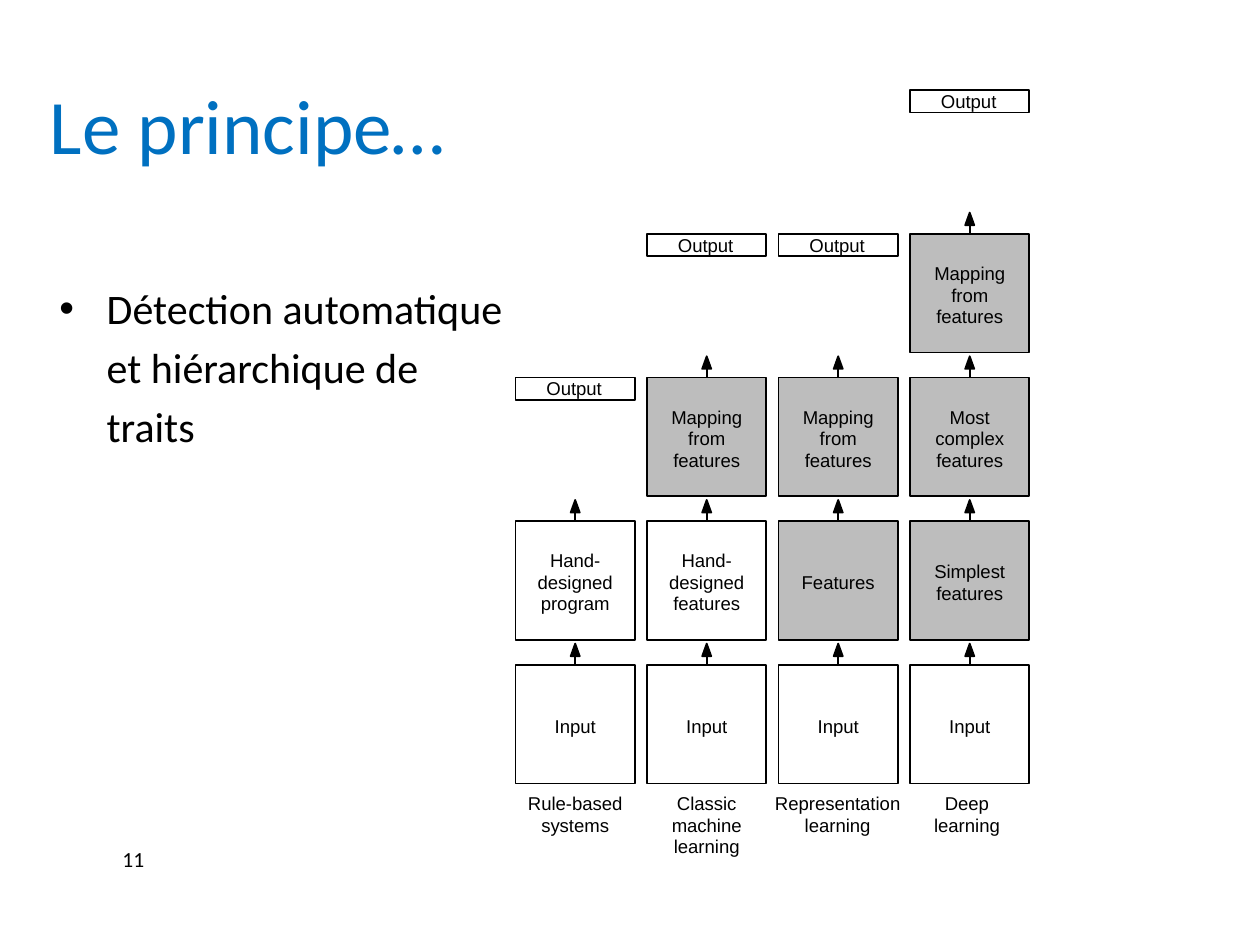
from lxml import etree
from pptx import Presentation
from pptx import util as u
from pptx.dml.color import RGBColor
from pptx.enum import shapes, text
from pptx.oxml.ns import qn

Pt = u.Pt
MID, TOP = text.MSO_ANCHOR.MIDDLE, text.MSO_ANCHOR.TOP
LEFT, CENTER = text.PP_ALIGN.LEFT, text.PP_ALIGN.CENTER

title = "Le principe…"
point = "Détection automatique et hiérarchique de traits"
number = "11"
gray = {"Mapping from features", "Most complex features",
        "Simplest features", "Features"}
stacks = [
    ("Rule-based systems", 58, 0, ["Input", "Hand- designed program"]),
    ("Classic machine learning", 44, 0,
     ["Input", "Hand- designed features", "Mapping from features"]),
    ("Representation learning", 74, -0.4,
     ["Input", "Features", "Mapping from features"]),
    ("Deep learning", 44, -1.6,
     ["Input", "Simplest features", "Most complex features",
      "Mapping from features"]),
]

theme = {
    "ink": RGBColor(0, 0, 0),
    "paper": RGBColor(255, 255, 255),
    "gray": RGBColor(0xBD, 0xBD, 0xBD),
    "blue": RGBColor(0, 0x70, 0xC0),
    "head": {"name": "Calibri", "size": Pt(44)},
    "body": {"name": "Calibri", "size": Pt(24)},
    "page": {"name": "Calibri", "size": Pt(12.3)},
    "label": {"name": "Arial", "size": Pt(10.6)},
}
grid = {"left": 294.6, "base": 379.9, "dx": 75.15, "dy": 82.1,
        "wide": 68.2, "high": 67.9, "flat": 12.8}
tip = {"wide": 5.2, "foot": 4.9, "rise": 12.1}


def put(item, **vals):
    for key, val in vals.items():
        setattr(item, key, val)


def place(shape, x, y, w, h):
    put(shape, left=Pt(x), top=Pt(y), width=Pt(w), height=Pt(h))


def paint(shape, fill):
    shape.shadow.inherit = False
    shape.fill.solid()
    shape.fill.fore_color.rgb = theme[fill]
    shape.line.color.rgb = theme["ink"]
    shape.line.width = Pt(1)


def write(shape, words, font, color="ink", align=LEFT, gap=None,
          anchor=TOP, pad=(0, 0, 0, 0)):
    frame = shape.text_frame
    left, top, right, low = map(Pt, pad)
    put(frame, text=words, word_wrap=True, vertical_anchor=anchor,
        auto_size=text.MSO_AUTO_SIZE.NONE, margin_left=left,
        margin_top=top, margin_right=right, margin_bottom=low)
    para = frame.paragraphs[0]
    put(para, alignment=align, space_before=Pt(0))
    if gap:
        para.line_spacing = Pt(gap)
    put(para.runs[0].font, **theme[font])
    para.runs[0].font.color.rgb = theme[color]
    return para


def label(slide, area, words, font, **form):
    box = slide.shapes.add_textbox(*map(Pt, area))
    return write(box, words, font, **form)


def block(slide, x, y, h, words, fill, **form):
    box = slide.shapes.add_shape(
        shapes.MSO_SHAPE.RECTANGLE, Pt(x), Pt(y), Pt(grid["wide"]), Pt(h))
    paint(box, fill)
    write(box, words, "label", align=CENTER, anchor=MID, **form)
    return box


def arrow(slide, box, x, y):
    foot, half = y - tip["foot"], tip["wide"] / 2
    shaft = slide.shapes.add_connector(
        shapes.MSO_CONNECTOR.STRAIGHT, Pt(x), Pt(y), Pt(x), Pt(foot))
    shaft.begin_connect(box, 0)
    shaft.line.color.rgb = theme["ink"]
    shaft.line.width = Pt(1)
    etree.SubElement(shaft._element.spPr, qn("a:effectLst"))
    pen = slide.shapes.build_freeform(Pt(x), Pt(y - tip["rise"]))
    pen.add_line_segments([(Pt(x - half), Pt(foot)),
                           (Pt(x + half), Pt(foot))], close=True)
    paint(pen.convert_to_shape(), "ink")


def stack(slide, col, name, width, shift, steps):
    x = grid["left"] + col * grid["dx"]
    mid = x + grid["wide"] / 2
    for row, words in enumerate(steps):
        y = grid["base"] - row * grid["dy"]
        fill = "gray" if words in gray else "paper"
        box = block(slide, x, y, grid["high"], words, fill,
                    gap=12.3, pad=(11.5, 2, 11.5, 0))
        arrow(slide, box, mid, y)
    block(slide, x, grid["base"] - len(steps) * grid["dy"],
          grid["flat"], "Output", "paper", pad=(0, 0, 1.2, 0.4))
    label(slide, (mid + shift - width / 2, 453.1, width, 37), name,
          "label", align=CENTER, gap=12.3)


def main():
    deck = Presentation()
    put(deck, slide_width=Pt(720), slide_height=Pt(540))
    slide = deck.slides.add_slide(deck.slide_layouts[5])
    head = slide.shapes.title
    place(head, 28.4, 63.4, 448, 34.6)
    write(head, title, "head", color="blue", gap=33.5)
    for col, spec in enumerate(stacks):
        stack(slide, col, *spec)
    para = label(slide, (25.9, 153.4, 274, 110), point, "body",
                 gap=33.5, pad=(7.2, 3.6, 7.2, 3.6))
    props = para._p.get_or_add_pPr()
    props.set("marL", str(Pt(28)))
    props.set("indent", str(-Pt(27)))
    etree.SubElement(props, qn("a:buFont"), typeface="Arial")
    etree.SubElement(props, qn("a:buChar"), char="•")
    label(slide, (70, 483.5, 16, 15), number, "page")
    deck.save("out.pptx")


if __name__ == "__main__":
    main()
